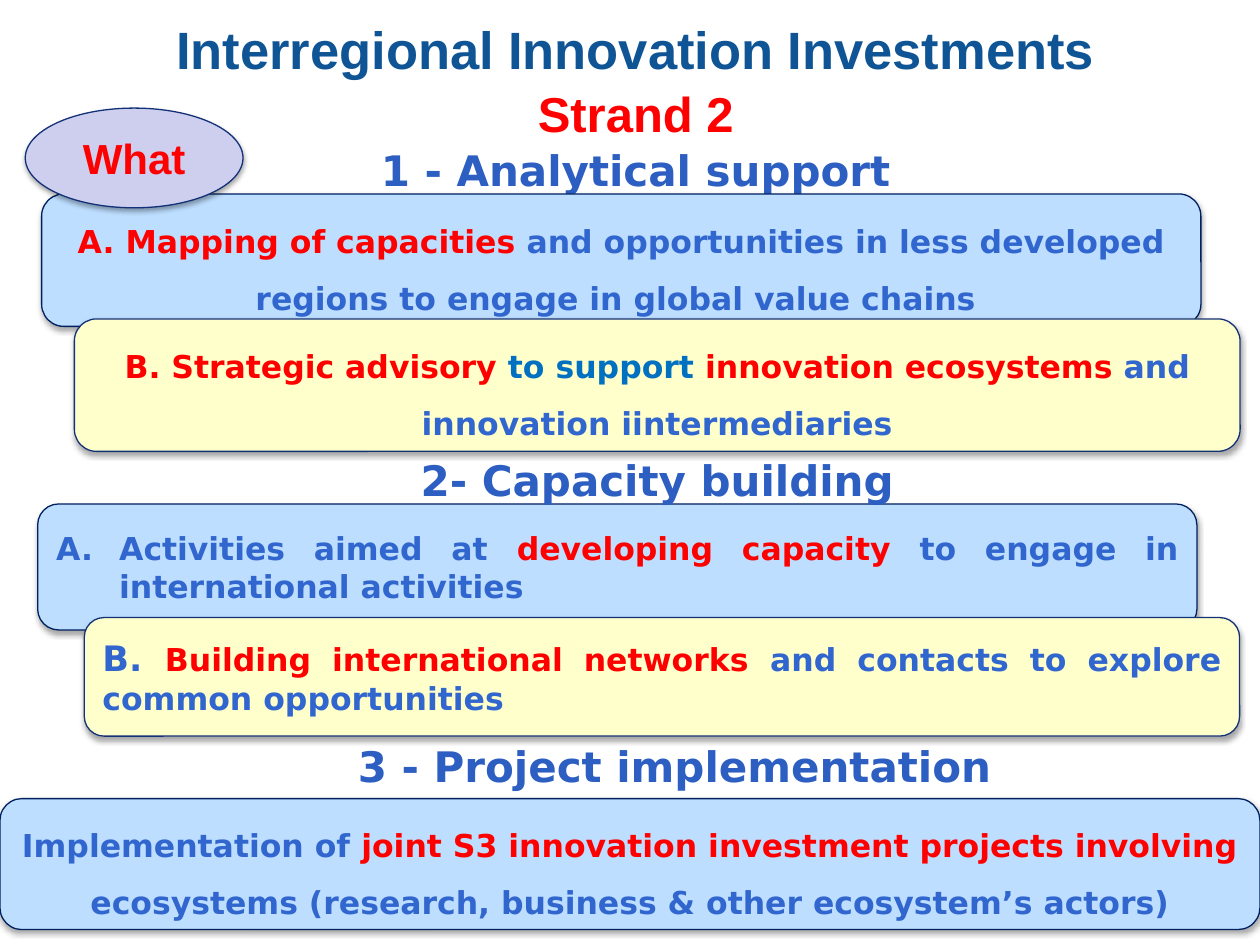
from dataclasses import dataclass

from lxml import etree
from pptx import Presentation
from pptx.dml.color import RGBColor
from pptx.enum.shapes import MSO_SHAPE
from pptx.enum.text import MSO_ANCHOR, MSO_AUTO_SIZE, PP_ALIGN
from pptx.oxml.ns import qn
from pptx.util import Cm, Pt

CENTER, JUSTIFY = PP_ALIGN.CENTER, PP_ALIGN.JUSTIFY
TOP, MIDDLE = MSO_ANCHOR.TOP, MSO_ANCHOR.MIDDLE
NO_FIT = MSO_AUTO_SIZE.NONE
ROUNDED, ELLIPSE = MSO_SHAPE.ROUNDED_RECTANGLE, MSO_SHAPE.OVAL

TITLE_BLUE = RGBColor(0x0F, 0x54, 0x94)
HEADING_BLUE = RGBColor(0x2D, 0x5E, 0xC1)
TEXT_BLUE = RGBColor(0x31, 0x66, 0xCF)
SUPPORT_BLUE = RGBColor(0x00, 0x70, 0xC0)
RED = RGBColor(0xFF, 0x00, 0x00)
LIGHT_BLUE = RGBColor(0xBD, 0xDE, 0xFF)
LIGHT_YELLOW = RGBColor(0xFF, 0xFF, 0xCC)
LAVENDER = RGBColor(0xCE, 0xCE, 0xEF)
NAVY = RGBColor(0x00, 0x20, 0x60)
DARK_BLUE = RGBColor(0x13, 0x31, 0x76)

TITLE_FONT, BODY_FONT = "Arial", "DejaVu Sans"
PAGE_WIDTH, PAGE_HEIGHT = 25.4, 19.05


@dataclass
class Box:
    """A rectangle in centimetres."""
    left: float
    top: float
    width: float
    height: float

    def inside(self, parent):
        return Box(parent.left + self.left, parent.top + self.top, self.width, self.height)

    def lengths(self):
        return [Cm(value) for value in (self.left, self.top, self.width, self.height)]


@dataclass
class Card:
    """A rounded panel; runs are (text, colour) or (text, colour, size)."""
    box: Box
    fill: RGBColor
    line: RGBColor
    runs: list
    align: PP_ALIGN = CENTER
    line_spacing: float = 1.5
    lettered: bool = False


def write(paragraph, text, *, color, size=18, font=BODY_FONT):
    run = paragraph.add_run()
    run.text = text
    run.font.name = font
    run.font.size = Pt(size)
    run.font.bold = True
    run.font.color.rgb = color


def add_soft_shadow(shape):
    effects = shape._element.spPr.find(qn("a:effectLst"))
    shadow = etree.SubElement(
        effects, qn("a:outerShdw"), blurRad=str(Pt(3.1)), dist=str(Pt(1.8)),
        dir="5400000", algn="ctr", rotWithShape="0")
    color = etree.SubElement(shadow, qn("a:srgbClr"), val="000000")
    etree.SubElement(color, qn("a:alpha"), val="35000")


def letter_paragraph(paragraph):
    """Number the paragraph A., B., ... with a hanging indent."""
    properties = paragraph._p.get_or_add_pPr()
    properties.set("marL", str(Cm(1.27)))
    properties.set("indent", str(Cm(-1.27)))
    etree.SubElement(properties, qn("a:buFont"), typeface="+mj-lt")
    etree.SubElement(properties, qn("a:buAutoNum"), type="alphaUcPeriod")


def add_panel(slide, kind, box, fill, line):
    """Add a shadowed shape and return its first paragraph."""
    shape = slide.shapes.add_shape(kind, *box.lengths())
    shape.shadow.inherit = False
    add_soft_shadow(shape)
    shape.fill.solid()
    shape.fill.fore_color.rgb = fill
    shape.line.color.rgb = line
    shape.line.width = Pt(0.75)
    shape.text_frame.word_wrap = True
    shape.text_frame.vertical_anchor = MIDDLE
    return shape.text_frame.paragraphs[0]


def add_card(slide, frame, card):
    paragraph = add_panel(slide, ROUNDED, card.box.inside(frame), card.fill, card.line)
    paragraph.alignment = card.align
    paragraph.line_spacing = card.line_spacing
    if card.lettered:
        letter_paragraph(paragraph)
    for text, color, *size in card.runs:
        write(paragraph, text, color=color, size=size[0] if size else 18)


def add_heading(slide, box, text):
    frame = slide.shapes.add_textbox(*box.lengths()).text_frame
    frame.word_wrap = True
    paragraph = frame.paragraphs[0]
    paragraph.alignment = CENTER
    write(paragraph, text, color=HEADING_BLUE, size=24)


def add_section(slide, frame, cards, heading=None, heading_box=None):
    for card in cards:
        add_card(slide, frame, card)
    if heading:
        add_heading(slide, heading_box.inside(frame), heading)


def add_title(slide, box):
    title = slide.shapes.title
    title.left, title.top, title.width, title.height = box.lengths()
    frame = title.text_frame
    frame.auto_size = NO_FIT
    frame.word_wrap = True
    frame.vertical_anchor = TOP
    frame.margin_top = Cm(0.2)
    lines = [
        ("Interregional Innovation Investments", TITLE_BLUE, 30, TITLE_FONT),
        ("Strand 2", RED, 28, TITLE_FONT),
        ("1 - Analytical support", HEADING_BLUE, 24, BODY_FONT),
    ]
    for index, (text, color, size, font) in enumerate(lines):
        paragraph = frame.add_paragraph() if index else frame.paragraphs[0]
        paragraph.alignment = CENTER
        paragraph.space_before = Pt(1.5 if index else 0)
        write(paragraph, text, color=color, size=size, font=font)


def add_badge(slide, box):
    paragraph = add_panel(slide, ELLIPSE, box, LAVENDER, DARK_BLUE)
    paragraph.alignment = CENTER
    paragraph.space_after = Pt(12)
    write(paragraph, "What", color=RED, size=24, font=TITLE_FONT)


ANALYSIS = [
    Card(Box(0.84, 0, 23.37, 2.67), LIGHT_BLUE, NAVY, [
        ("A. Mapping of capacities ", RED),
        ("and opportunities in less developed regions to engage in global value chains ",
         TEXT_BLUE)]),
    Card(Box(1.5, 2.52, 23.5, 2.67), LIGHT_YELLOW, DARK_BLUE, [
        ("B. Strategic advisory ", RED), ("to support ", SUPPORT_BLUE),
        ("innovation ecosystems ", RED), ("and innovation iintermediaries", TEXT_BLUE)]),
]
CAPACITY = [
    Card(Box(0.76, 1.12, 23.37, 2.54), LIGHT_BLUE, NAVY, [
        ("Activities aimed at ", TEXT_BLUE), ("developing capacity ", RED),
        ("to engage in international activities", TEXT_BLUE)], JUSTIFY, 1.0, True),
    Card(Box(1.7, 3.41, 23.29, 2.39), LIGHT_YELLOW, DARK_BLUE, [
        ("B. ", TEXT_BLUE, 20), ("Building international networks ", RED),
        ("and contacts to explore common opportunities", TEXT_BLUE)], JUSTIFY, 1.0),
]
IMPLEMENTATION = [
    Card(Box(0, 1.29, PAGE_WIDTH, 2.64), LIGHT_BLUE, NAVY, [
        ("Implementation of ", TEXT_BLUE),
        ("joint S3 innovation investment projects involving ", RED),
        ("ecosystems (research, business & other ecosystem’s actors)", TEXT_BLUE)]),
]


def main():
    presentation = Presentation()
    presentation.slide_width, presentation.slide_height = Cm(PAGE_WIDTH), Cm(PAGE_HEIGHT)
    slide = presentation.slides.add_slide(presentation.slide_layouts[5])
    add_title(slide, Box(1.5, 0.15, 22.63, 2.06))
    add_section(slide, Box(0, 3.91, PAGE_WIDTH, 5.19), ANALYSIS)
    add_badge(slide, Box(0.51, 2.18, 4.39, 2.01))
    add_section(slide, Box(0, 9.04, PAGE_WIDTH, 5.8), CAPACITY,
                "2- Capacity building", Box(3.61, 0, 19.28, 1.27))
    add_section(slide, Box(0, 14.81, PAGE_WIDTH, 3.93), IMPLEMENTATION,
                "3 - Project implementation", Box(6.5, 0, 14.2, 1.27))
    presentation.save("out.pptx")


if __name__ == "__main__":
    main()
